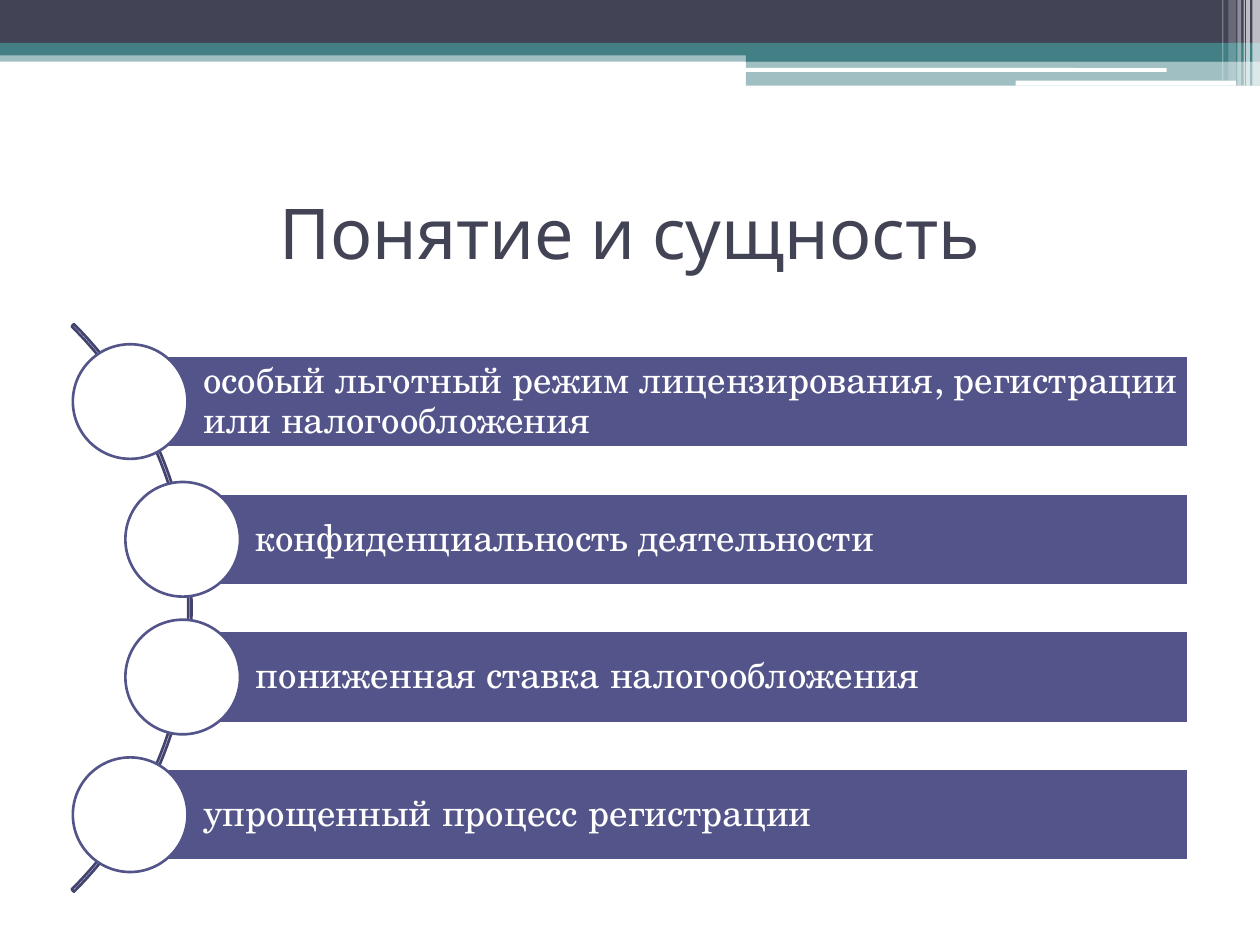
from dataclasses import dataclass

from lxml.etree import SubElement
from pptx import Presentation
from pptx.dml.color import RGBColor
from pptx.enum.shapes import MSO_SHAPE
from pptx.enum.text import MSO_ANCHOR, PP_ALIGN
from pptx.oxml.ns import qn
from pptx.util import Inches, Pt

COLS, ROWS = 100, 75
WIDTH, HEIGHT = Inches(10), Inches(7.5)

DARK = RGBColor(0x42, 0x44, 0x56)
TEAL = RGBColor(0x43, 0x80, 0x86)
WHITE = RGBColor(0xFF, 0xFF, 0xFF)
VIOLET = RGBColor(0x53, 0x54, 0x8A)
ARC = RGBColor(0x42, 0x43, 0x6F)


@dataclass
class Box:
    """A place on the grid, in columns and rows."""
    left: float
    top: float
    width: float
    height: float

    def emu(self) -> tuple:
        return (col(self.left), row(self.top),
                col(self.width), row(self.height))


@dataclass
class Band:
    box: Box
    color: RGBColor
    alpha: int = 100
    kind: MSO_SHAPE = MSO_SHAPE.RECTANGLE


@dataclass
class Item:
    text: str
    center: float


ROUND = MSO_SHAPE.ROUNDED_RECTANGLE
BANDS = [
    Band(Box(0, 4, 100, 0.9), TEAL, 50),
    Band(Box(0, 0, 100, 3.4), DARK),
    Band(Box(0, 3.4, 100, 1), TEAL),
    Band(Box(59.2, 3.9, 40.8, 1), TEAL),
    Band(Box(59.2, 4.85, 40.8, 1.95), TEAL, 50),
    Band(Box(59.1, 5.4, 33.5, 0.3), WHITE, kind=ROUND),
    Band(Box(80.6, 6.4, 17.5, 0.4), WHITE, kind=ROUND),
    Band(Box(99.4, 0, 0.6, 6.8), WHITE, 65),
    Band(Box(98.9, 0, 0.3, 6.8), WHITE, 65),
    Band(Box(98.7, 0, 0.1, 6.8), WHITE, 60),
    Band(Box(98.2, 0, 0.3, 6.8), WHITE, 40),
    Band(Box(97.5, 0, 0.6, 6.4), WHITE, 20),
    Band(Box(97, 0, 0.1, 6.4), WHITE, 30),
]

NEAR, FAR = 10.33, 14.5
ITEMS = [
    Item("особый льготный режим лицензирования, регистрации "
         "или налогообложения", NEAR),
    Item("конфиденциальность деятельности", FAR),
    Item("пониженная ставка налогообложения", FAR),
    Item("упрощенный процесс регистрации", NEAR),
]
FIRST, PITCH = 31.87, 10.93
BAR, DISC, RIGHT = 7.3, 9.1, 94.3


def col(count: float) -> int:
    return round(WIDTH * count / COLS)


def row(count: float) -> int:
    return round(HEIGHT * count / ROWS)


def draw(slide, kind: MSO_SHAPE, box: Box, fill=None, line=None):
    shape = slide.shapes.add_shape(kind, *box.emu())
    shape.shadow.inherit = False
    if fill is None:
        shape.fill.background()
    else:
        shape.fill.solid()
        shape.fill.fore_color.rgb = fill
    if line is None:
        shape.line.fill.background()
    else:
        shape.line.color.rgb = line
        shape.line.width = Pt(1.5)
    return shape


def draw_band(slide, band: Band) -> None:
    shape = draw(slide, band.kind, band.box, band.color)
    if band.alpha < 100:
        tint = shape.fill._xPr.find(".//" + qn("a:srgbClr"))
        SubElement(tint, qn("a:alpha"), val=str(band.alpha * 1000))


def write(shape, text: str, size: int, name: str, color: RGBColor,
          align: PP_ALIGN):
    frame = shape.text_frame
    frame.word_wrap = True
    frame.vertical_anchor = MSO_ANCHOR.MIDDLE
    para = frame.paragraphs[0]
    para.text = text
    para.alignment = align
    para.font.size = Pt(size)
    para.font.name = name
    para.font.color.rgb = color
    return frame


def draw_title(slide) -> None:
    shape = slide.shapes.add_textbox(*Box(5, 12.5, 90, 11.7).emu())
    write(shape, "Понятие и сущность", 40, "Karla", DARK, PP_ALIGN.CENTER)


def draw_arc(slide) -> None:
    arc = draw(slide, MSO_SHAPE.BLOCK_ARC, Box(-48.5, 16.4, 63.7, 63.7),
               line=ARC)
    for index, value in enumerate((189, 27, 0.004)):
        arc.adjustments[index] = value


def draw_item(slide, item: Item, middle: float) -> None:
    """Draw a bar with its text, and the disc over the bar's left end."""
    place = Box(item.center, middle - BAR / 2, RIGHT - item.center, BAR)
    bar = draw(slide, MSO_SHAPE.RECTANGLE, place, VIOLET, WHITE)
    frame = write(bar, item.text, 21, "TeX Gyre Schola", WHITE, PP_ALIGN.LEFT)
    frame.paragraphs[0].line_spacing = 0.9
    frame.margin_left = col(5.8)
    frame.margin_right = col(0.6)
    frame.margin_top = frame.margin_bottom = row(0.6)
    disc = Box(item.center - DISC / 2, middle - DISC / 2, DISC, DISC)
    draw(slide, MSO_SHAPE.OVAL, disc, WHITE, VIOLET)


def main() -> None:
    deck = Presentation()
    deck.slide_width, deck.slide_height = WIDTH, HEIGHT
    slide = deck.slides.add_slide(deck.slide_layouts[6])
    for band in BANDS:
        draw_band(slide, band)
    draw_title(slide)
    draw_arc(slide)
    for index, item in enumerate(ITEMS):
        draw_item(slide, item, FIRST + index * PITCH)
    deck.save("out.pptx")


if __name__ == "__main__":
    main()
